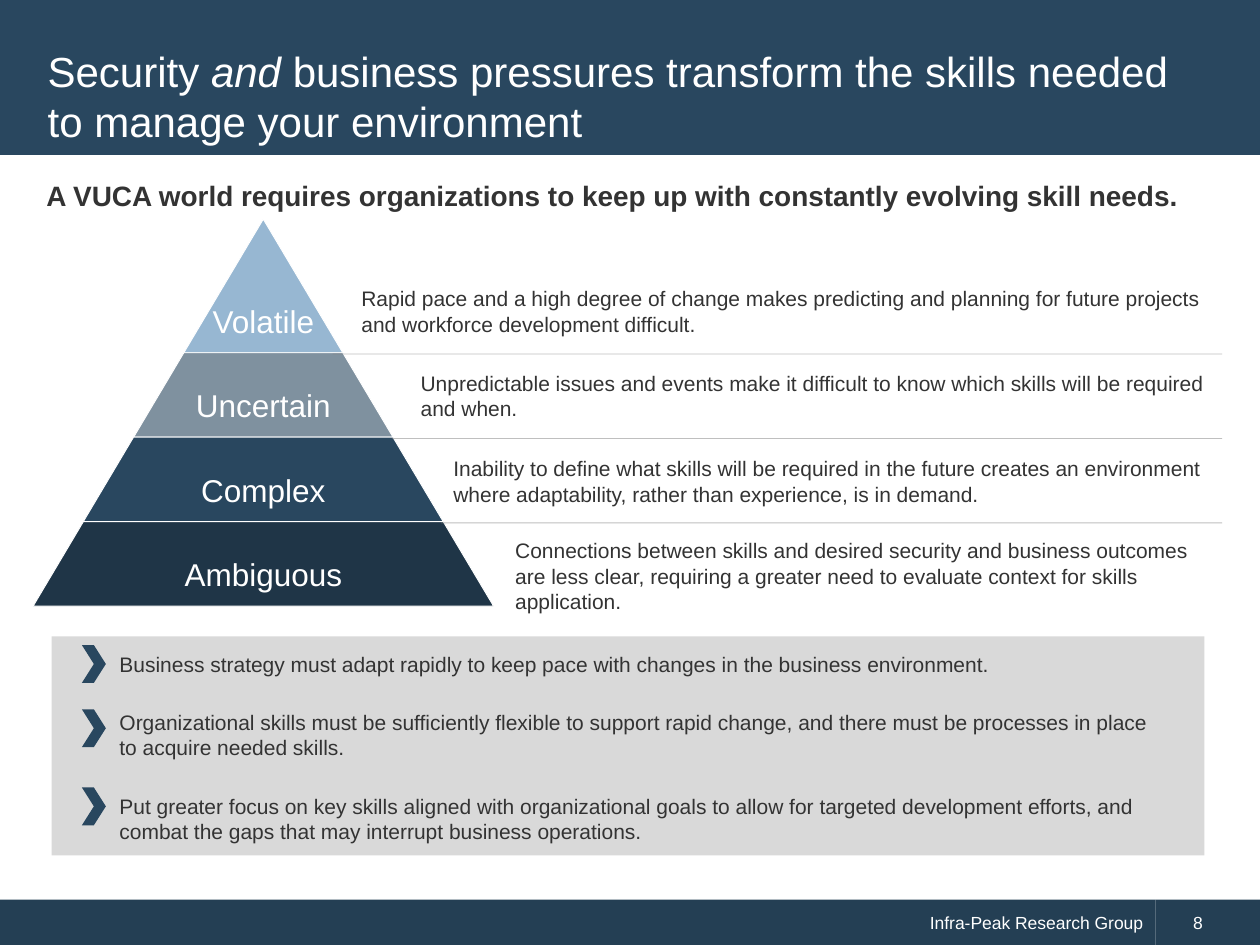
from lxml import etree
from pptx import Presentation, util as u
from pptx.dml.color import RGBColor
from pptx.enum import shapes, text
from pptx.oxml import ns

WIDE, HIGH = u.Inches(10), u.Inches(7.5)
COL, ROW = WIDE / 100, HIGH / 75  # grid of 100 columns by 75 rows

NAVY, DEEP, FOOT = "29475F", "1F3547", "243F54"
SKY, SLATE, PALE = "97B7D2", "7F919F", "D9D9D9"
INK, WHITE, GREY = "333333", "FFFFFF", "808080"

KIND = shapes.MSO_SHAPE
MID, LOW, TOP = text.MSO_ANCHOR.MIDDLE, text.MSO_ANCHOR.BOTTOM, text.MSO_ANCHOR.TOP
LEFT, RIGHT, CENTER = text.PP_ALIGN.LEFT, text.PP_ALIGN.RIGHT, text.PP_ALIGN.CENTER

AXIS, PEAK, SLOPE = 20.9, 17.4, 0.595
EDGE = 97  # right end of rules and descriptions

# name, fill, rows, share of width for the label
LEVELS = [
    ("Volatile", SKY, 10.6, 1),
    ("Uncertain", SLATE, 6.7, 0.65),
    ("Complex", NAVY, 6.7, 0.65),
    ("Ambiguous", DEEP, 6.7, 0.65),
]
RULES = [26.4, 31.1, 35]  # left ends, one below each of the first levels
# left, top, rows, words
NOTES = [
    (27.7, 22.2, 5, "Rapid pace and a high degree of change makes predicting and planning "
     "for future projects and workforce development difficult."),
    (32.4, 28.9, 5, "Unpredictable issues and events make it difficult to know which skills "
     "will be required and when."),
    (35, 35.7, 5, "Inability to define what skills will be required in the future creates "
     "an environment where adaptability, rather than experience, is in demand."),
    (39.9, 42.2, 7.1, "Connections between skills and desired security and business outcomes "
     "are less clear, requiring a greater need to evaluate context for skills application."),
]
# chevron top, text top, rows, words
POINTS = [
    (51.2, 51.2, 3, "Business strategy must adapt rapidly to keep pace with changes in the "
     "business environment."),
    (56.3, 55.8, 5, "Organizational skills must be sufficiently flexible to support rapid "
     "change, and there must be processes in place to acquire needed skills."),
    (62.5, 62.5, 5, "Put greater focus on key skills aligned with organizational goals to "
     "allow for targeted development efforts, and combat the gaps that may interrupt "
     "business operations."),
]


def paint(hue):
    return RGBColor.from_string(hue)


def place(x, y, w, h):
    """Turn columns and rows into slide lengths."""
    return [round(n) for n in (x * COL, y * ROW, w * COL, h * ROW)]


def block(pen, kind, at, fill, edge=None):
    """Add a filled preset shape, outlined only when edge is given."""
    item = pen.add_shape(kind, *place(*at))
    item.shadow.inherit = False
    item.fill.solid()
    item.fill.fore_color.rgb = paint(fill)
    if edge:
        item.line.color.rgb = paint(edge)
        item.line.width = u.Pt(0.5)
    else:
        item.line.fill.background()
    return item


def write(item, runs, size, hue=INK, anchor=TOP, align=LEFT, bold=False):
    """Fill a shape with one paragraph of (words, italic) runs."""
    frame = item.text_frame
    frame.word_wrap = True
    frame.vertical_anchor = anchor
    para = frame.paragraphs[0]
    para.alignment = align
    for words, slant in runs:
        run = para.add_run()
        run.text = words
        font = run.font
        font.name, font.size = "Arial", u.Pt(size)
        font.bold, font.italic = bold, slant
        font.color.rgb = paint(hue)
    return frame


def label(pen, at, words, size, **style):
    """Add a text box; words is a string or a list of runs."""
    runs = [(words, False)] if isinstance(words, str) else words
    return write(pen.add_textbox(*place(*at)), runs, size, **style)


def rule(pen, x, y):
    """Add a thin half-clear line from x to the right edge."""
    a, b, c, d = place(x, y, EDGE, y)
    line = pen.add_connector(shapes.MSO_CONNECTOR.STRAIGHT, a, b, c, d)
    line.line.color.rgb = paint(GREY)
    line.line.width = u.Pt(0.5)
    props = line._element.spPr
    tone = props.find(".//" + ns.qn("a:srgbClr"))
    etree.SubElement(tone, ns.qn("a:alpha"), val="50000")
    etree.SubElement(props, ns.qn("a:effectLst"))


def level(pen, y, name, fill, rows, share):
    """Add one pyramid level, its width set by its depth below the peak."""
    wide = 2 * SLOPE * (y + rows - PEAK)
    part = block(pen, KIND.TRAPEZOID, (AXIS - wide / 2, y, wide, rows), fill, WHITE)
    part.adjustments[0] = SLOPE
    span = wide * share
    frame = label(pen, (AXIS - span / 2, y, span, rows), name, 18,
                  hue=WHITE, anchor=LOW, align=CENTER)
    frame.margin_left = frame.margin_right = frame.margin_top = u.Inches(0.03)
    frame.margin_bottom = u.Inches(0.1)
    frame.paragraphs[0].line_spacing = 0.9


def pyramid(pen):
    y = PEAK
    ends = []
    for name, fill, rows, share in LEVELS:
        level(pen, y, name, fill, rows, share)
        y += rows
        ends.append(y + 0.1)
    for x, end in zip(RULES, ends):
        rule(pen, x, end)
    for x, top, rows, words in NOTES:
        label(pen, (x, top, EDGE - x, rows), words, 12)


def footer(pen):
    left = block(pen, KIND.RECTANGLE, (0, 71.4, 91.7, 3.7), FOOT)
    frame = write(left, [("Infra-Peak Research Group", False)], 10, WHITE, MID, RIGHT)
    right = block(pen, KIND.RECTANGLE, (91.7, 71.4, 8.3, 3.7), FOOT)
    frame = write(right, [("8", False)], 10, WHITE, MID)
    frame.margin_left = u.Inches(0.3)


def main():
    deck = Presentation()
    deck.slide_width, deck.slide_height = WIDE, HIGH
    pen = deck.slides.add_slide(deck.slide_layouts[6]).shapes

    footer(pen)
    block(pen, KIND.RECTANGLE, (0, 0, 100, 12.3), NAVY)
    block(pen, KIND.RECTANGLE, (4.1, 50.5, 91.5, 17.4), PALE)
    label(pen, (2.8, 2.8, 94.3, 9.6), [
        ("Security ", False), ("and ", True),
        ("business pressures transform the skills needed to manage your environment", False),
    ], 24, hue=WHITE, anchor=MID)
    label(pen, (2.7, 13, 94.3, 5), "A VUCA world requires organizations to keep up with "
          "constantly evolving skill needs.", 16, anchor=MID, bold=True)

    pyramid(pen.add_group_shape().shapes)
    for mark, top, rows, words in POINTS:
        label(pen, (8.5, top, 84, rows), words, 12)
        block(pen, KIND.CHEVRON, (6.5, mark, 1.9, 3), NAVY)

    deck.save("out.pptx")


if __name__ == "__main__":
    main()
